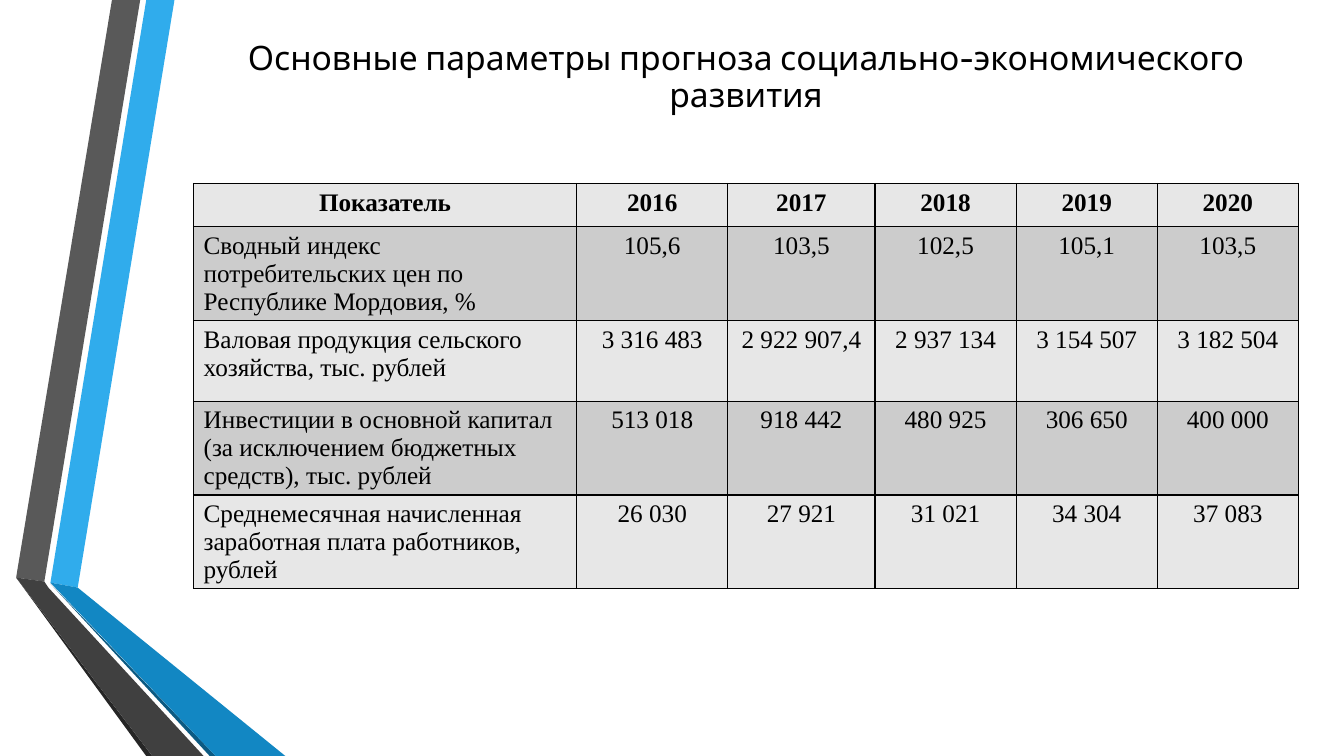
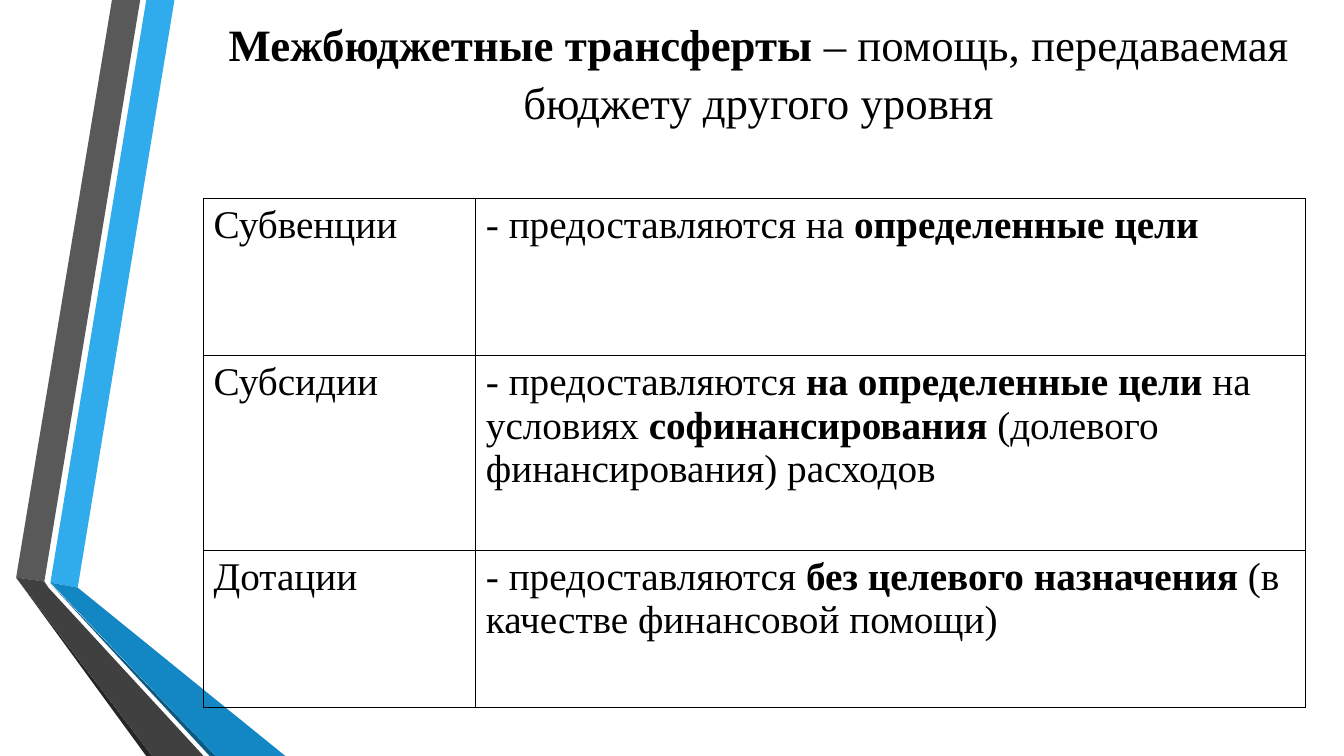
import pptx
import pptx.util
import pptx.dml.color
import pptx.enum.text
import pptx.oxml
import pptx.oxml.ns
from dataclasses import dataclass

Align = pptx.enum.text.PP_ALIGN
Anchor = pptx.enum.text.MSO_ANCHOR


@dataclass(frozen=True)
class Theme:
    ink: str = "000000"
    pale: str = "E7E7E7"
    grey: str = "CCCCCC"
    sky: str = "30ACEC"
    blue: str = "1287C3"
    navy: str = "0C5A82"
    slate: str = "595959"
    coal: str = "404040"
    soot: str = "262626"
    sans: str = "Cabin"
    serif: str = "Times New Roman"
    small: int = 18
    head: int = 24
    body: int = 28
    large: int = 32
    rule: int = 1


THEME = Theme()
WIDE, HIGH = pptx.util.Inches(13.33), pptx.util.Inches(7.5)

# Ribbon outlines, in percent of the slide's width and height
BANDS = [
    (THEME.sky, [(3.75, 77.07), (5.78, 77.73), (12.98, 0), (10.88, 0)]),
    (THEME.slate, [(10.43, 0), (8.33, 0), (1.2, 76.4), (3.3, 76.93)]),
    (THEME.soot, [(1.2, 76.4), (10.88, 100), (11.33, 100)]),
    (THEME.navy, [(3.75, 77.2), (15.6, 100), (16.05, 100)]),
    (THEME.blue, [(3.75, 77.07), (16.05, 100), (21.23, 100), (5.78, 77.73)]),
    (THEME.coal, [(15.15, 100), (3.6, 77.73), (3.3, 76.93), (1.2, 76.4),
                  (11.33, 100)]),
]


def spot(x, y):
    """Turn percent of the slide into lengths."""
    return int(WIDE * x / 100), int(HIGH * y / 100)


def place(box):
    x, y, w, h = box
    return spot(x, y) + spot(w, h)


def tint(fill, tone):
    fill.solid()
    fill.fore_color.rgb = pptx.dml.color.RGBColor.from_string(tone)


def write(para, runs, size, face, align=Align.LEFT):
    """Add (text, bold) runs to a paragraph."""
    para.alignment = align
    for text, bold in runs:
        run = para.add_run()
        run.text = text
        font = run.font
        font.size, font.name, font.bold = pptx.util.Pt(size), face, bold
        font.color.rgb = pptx.dml.color.RGBColor.from_string(THEME.ink)


def draw_bands(slide, layout):
    """Draw the ribbons and keep them on the layout all slides use."""
    for place_no, (tone, dots) in enumerate(BANDS):
        first, *rest = [spot(x, y) for x, y in dots]
        pen = slide.shapes.build_freeform(*first, scale=1.0)
        pen.add_line_segments(rest, close=True)
        band = pen.convert_to_shape()
        band.shadow.inherit = False
        tint(band.fill, tone)
        band.line.fill.background()
        layout.shapes.element.insert(2 + place_no, band.element)


def add_title(slide, box, runs, size, face, gap):
    title = slide.shapes.title
    title.left, title.top, title.width, title.height = place(box)
    frame = title.text_frame
    frame.word_wrap = True
    frame.auto_size = pptx.enum.text.MSO_AUTO_SIZE.NONE
    frame.vertical_anchor = Anchor.MIDDLE
    para = frame.paragraphs[0]
    para.line_spacing = gap
    write(para, runs, size, face, Align.CENTER)


def edge(cell):
    """Rule all four sides of a cell."""
    props = cell._tc.get_or_add_tcPr()
    space = pptx.oxml.ns.nsdecls("a")
    for i, side in enumerate("LRTB"):
        props.insert(i, pptx.oxml.parse_xml(
            f'<a:ln{side} {space} w="{pptx.util.Pt(THEME.rule)}"><a:solidFill>'
            f'<a:srgbClr val="{THEME.ink}"/></a:solidFill></a:ln{side}>'))


def add_grid(slide, box, cols, rows, cells, size, tones=None, mid=False):
    """Fill box with a table; cols and rows are relative weights."""
    left, top, width, height = place(box)
    table = slide.shapes.add_table(
        len(rows), len(cols), left, top, width, height).table
    table.first_row = table.horz_banding = False
    for col, part in zip(table.columns, cols):
        col.width = int(width * part / sum(cols))
    for row, part in zip(table.rows, rows):
        row.height = int(height * part / sum(rows))
    for r, line in enumerate(cells):
        for c, runs in enumerate(line):
            cell = table.cell(r, c)
            if tones:
                tint(cell.fill, tones[r % len(tones)])
            else:
                cell.fill.background()
            edge(cell)
            align = Align.CENTER if mid and (r == 0 or c) else Align.LEFT
            write(cell.text_frame.paragraphs[0], runs, size, THEME.serif, align)


def show_goals(slide):
    """Forecast figures by year."""
    add_title(slide, (14.4, 3.6, 82.22, 13.47),
              [("Основные параметры прогноза социально-экономического развития",
                False)], THEME.head, THEME.sans, 0.9)
    data = [
        ("Показатель", "2016", "2017", "2018", "2019", "2020"),
        ("Сводный индекс потребительских цен по Республике Мордовия, %",
         "105,6", "103,5", "102,5", "105,1", "103,5"),
        ("Валовая продукция сельского хозяйства, тыс. рублей",
         "3 316 483", "2 922 907,4", "2 937 134", "3 154 507", "3 182 504"),
        ("Инвестиции в основной капитал (за исключением бюджетных средств), "
         "тыс. рублей",
         "513 018", "918 442", "480 925", "306 650", "400 000"),
        ("Среднемесячная начисленная заработная плата работников, рублей",
         "26 030", "27 921", "31 021", "34 304", "37 083"),
    ]
    cells = [[[(text, r == 0)] for text in line] for r, line in enumerate(data)]
    add_grid(slide, (14.4, 24.27, 82.22, 53.6),
             (3.8, 1.5, 1.46, 1.4, 1.4, 1.4), (0.43, 0.93, 0.8, 0.93, 0.93),
             cells, THEME.small, (THEME.pale, THEME.grey), mid=True)


def show_aid(slide):
    """Kinds of transfer and what each is for."""
    add_title(slide, (15.75, 1.33, 81.4, 16),
              [("Межбюджетные трансферты ", True),
               ("– помощь, передаваемая бюджету другого уровня", False)],
              THEME.large, THEME.serif, 1.08)
    lead = ("- предоставляются ", False)
    cells = [
        [[("Субвенции", False)],
         [("- предоставляются на ", False), ("определенные цели", True)]],
        [[("Субсидии", False)],
         [lead, ("на определенные цели ", True), ("на условиях ", False),
          ("софинансирования ", True),
          ("(долевого финансирования) расходов", False)]],
        [[("Дотации", False)],
         [lead, ("без целевого назначения ", True),
          ("(в качестве финансовой помощи)", False)]],
    ]
    add_grid(slide, (15.15, 26.27, 82, 67.33), (2.7, 8.23),
             (1.56, 1.93, 1.56), cells, THEME.body)


def main():
    deck = pptx.Presentation()
    deck.slide_width, deck.slide_height = WIDE, HIGH
    layout = deck.slide_layouts[5]
    slides = [deck.slides.add_slide(layout) for _ in range(2)]
    draw_bands(slides[0], layout)
    for show, slide in zip((show_goals, show_aid), slides):
        show(slide)
    deck.save("out.pptx")


if __name__ == "__main__":
    main()
